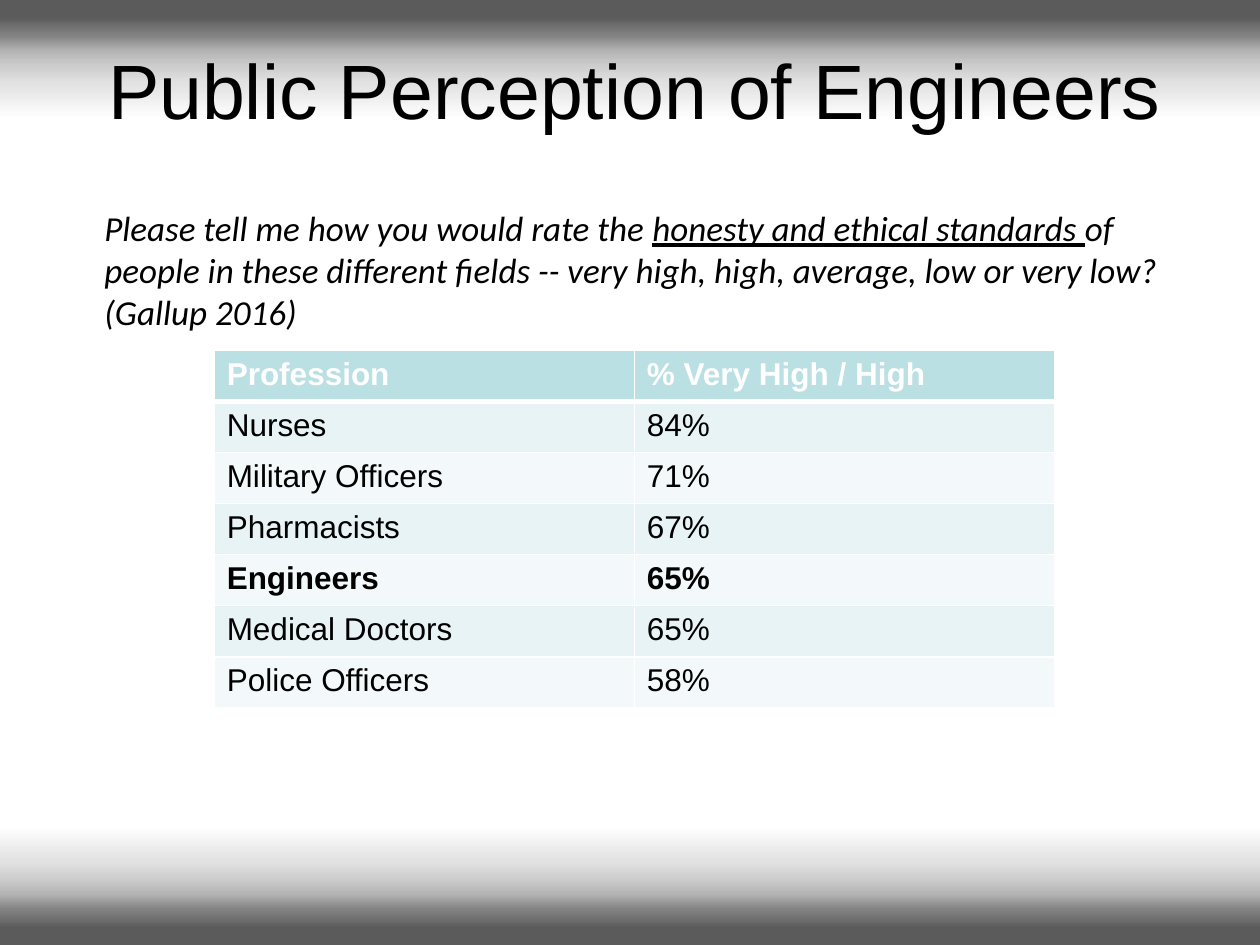
from lxml import etree
from pptx import Presentation
from pptx.dml.color import RGBColor
from pptx.enum.shapes import MSO_SHAPE
from pptx.enum.text import MSO_ANCHOR, PP_ALIGN
from pptx.oxml.ns import qn
from pptx.util import Inches, Pt

RECTANGLE = MSO_SHAPE.RECTANGLE
MIDDLE = MSO_ANCHOR.MIDDLE
CENTER = PP_ALIGN.CENTER
TITLE_ONLY = 5

BLACK = RGBColor(0x00, 0x00, 0x00)
WHITE = RGBColor(0xFF, 0xFF, 0xFF)
HEADER_FILL = RGBColor(0xBB, 0xE0, 0xE3)
ROW_FILLS = (RGBColor(0xE7, 0xF3, 0xF4), RGBColor(0xF3, 0xF9, 0xFA))
BAND_STOPS = [
    (0, WHITE),
    (7, WHITE),
    (35, RGBColor(0xE2, 0xE2, 0xE2)),
    (48, RGBColor(0xCE, 0xCE, 0xCE)),
    (60, RGBColor(0xB5, 0xB5, 0xB5)),
    (72, RGBColor(0x83, 0x83, 0x83)),
    (87, RGBColor(0x5B, 0x5B, 0x5B)),
    (100, RGBColor(0x5B, 0x5B, 0x5B)),
]

RATINGS = [
    ("Profession", "% Very High / High"),
    ("Nurses", "84%"),
    ("Military Officers", "71%"),
    ("Pharmacists", "67%"),
    ("Engineers", "65%"),
    ("Medical Doctors", "65%"),
    ("Police Officers", "58%"),
]
QUESTION = [
    ("Please tell me how you would rate the ", False),
    ("honesty and ethical standards ", True),
    ("of people in these different fields -- very high, high, average, "
     "low or very low?\u00a0 (Gallup 2016)", False),
]


def format_font(font, name, size, color, bold=False):
    font.name = name
    font.size = Pt(size)
    font.color.rgb = color
    font.bold = bold


def add_band(slide, top, rotation):
    """Add a full-width band that fades from grey at its outer edge to white."""
    band = slide.shapes.add_shape(
        RECTANGLE, Inches(0), Inches(top), Inches(10), Inches(1.02))
    band.shadow.inherit = False
    band.rotation = rotation
    band.line.fill.background()
    band.fill.gradient()
    band.fill.gradient_angle = 90
    stop_list = band._element.spPr.find(".//" + qn("a:gsLst"))
    for old_stop in list(stop_list):
        stop_list.remove(old_stop)
    for percent, color in BAND_STOPS:
        stop = etree.SubElement(stop_list, qn("a:gs"), pos=str(percent * 1000))
        etree.SubElement(stop, qn("a:srgbClr"), val=str(color))


def set_title(slide, text):
    title = slide.shapes.title
    title.left, title.top = Inches(0.54), Inches(0.43)
    title.width, title.height = Inches(9), Inches(1.25)
    frame = title.text_frame
    frame.text = text
    frame.vertical_anchor = MIDDLE
    frame.margin_top, frame.margin_bottom = Inches(0), Inches(0.7)
    paragraph = frame.paragraphs[0]
    paragraph.alignment = CENTER
    format_font(paragraph.runs[0].font, "Arial", 44, BLACK)


def add_question(slide):
    box = slide.shapes.add_textbox(
        Inches(0.73), Inches(1.59), Inches(9), Inches(3.99))
    box.text_frame.word_wrap = True
    paragraph = box.text_frame.paragraphs[0]
    for text, underlined in QUESTION:
        run = paragraph.add_run()
        run.text = text
        format_font(run.font, "Calibri", 20, BLACK)
        run.font.italic = True
        run.font.underline = underlined


def set_borders(cell, widths):
    """Draw white borders; widths maps each side's tag to points."""
    properties = cell._tc.get_or_add_tcPr()
    for index, (tag, width) in enumerate(widths.items()):
        line = etree.Element(qn(tag), w=str(Pt(width)))
        fill = etree.SubElement(line, qn("a:solidFill"))
        etree.SubElement(fill, qn("a:srgbClr"), val=str(WHITE))
        properties.insert(index, line)


def add_ratings_table(slide):
    table = slide.shapes.add_table(
        len(RATINGS), 2, Inches(1.7), Inches(2.78),
        Inches(6.67), Inches(2.84)).table
    for row_index, row in enumerate(RATINGS):
        is_header = row_index == 0
        fill = HEADER_FILL if is_header else ROW_FILLS[(row_index - 1) % 2]
        borders = {
            "a:lnL": 1,
            "a:lnR": 1,
            "a:lnT": 3 if row_index == 1 else 1,
            "a:lnB": 3 if is_header else 1,
        }
        for column_index, text in enumerate(row):
            cell = table.cell(row_index, column_index)
            cell.text = text
            cell.fill.solid()
            cell.fill.fore_color.rgb = fill
            set_borders(cell, borders)
            format_font(
                cell.text_frame.paragraphs[0].runs[0].font, "Arial", 18,
                WHITE if is_header else BLACK,
                bold=is_header or row[0] == "Engineers")


def main():
    presentation = Presentation()
    presentation.slide_width = Inches(10)
    presentation.slide_height = Inches(7.5)
    slide = presentation.slides.add_slide(
        presentation.slide_layouts[TITLE_ONLY])
    add_band(slide, top=0, rotation=0)
    add_band(slide, top=6.48, rotation=180)
    add_question(slide)
    add_ratings_table(slide)
    set_title(slide, "Public Perception of Engineers")
    # Bring the title in front of the top band.
    slide.shapes._spTree.append(slide.shapes.title._element)
    presentation.save("out.pptx")


if __name__ == "__main__":
    main()
